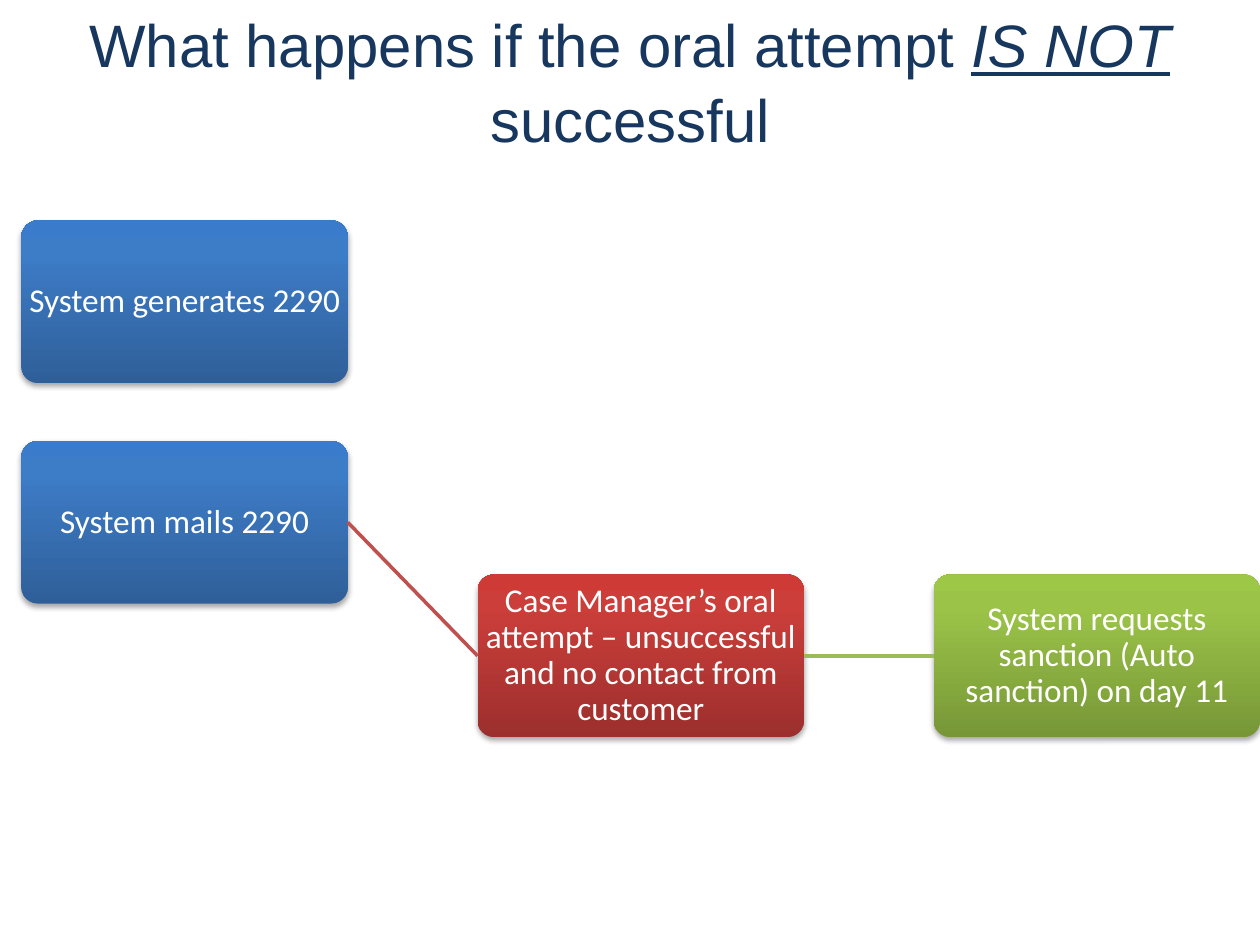
import dataclasses

import lxml.etree
import pptx
import pptx.dml.color
import pptx.enum.shapes
import pptx.enum.text
import pptx.oxml.ns
import pptx.util

Inches = pptx.util.Inches
qn = pptx.oxml.ns.qn


@dataclasses.dataclass(frozen=True)
class Theme:
    title_font: str = "Arial"
    title_size: float = 34.2
    title_color: str = "17375E"
    box_font: str = "Calibri"
    box_size: float = 19
    box_color: str = "FFFFFF"
    # Gradient stops run from the bottom edge to the top edge
    blue: tuple = ("2F5F99", "3D7CC7", "3A7CCB")
    red: tuple = ("9C2F2D", "CB3E3A", "CE3B37")
    green: tuple = ("779737", "9BC348", "9DC746")
    red_line: str = "C0504D"
    green_line: str = "9BBB59"
    line_width: float = 2


THEME = Theme()

# Grid of the flow chart, in inches
BOX_WIDTH, BOX_HEIGHT = 2.59, 1.29
GRID_LEFT, COLUMN_STEP = 0.17, 3.62
ROW_TOPS = (1.75, 3.5, 4.56)
LEFT_SITE, RIGHT_SITE = 1, 3


def rgb(color):
    return pptx.dml.color.RGBColor.from_string(color)


def add_element(parent, tag, **attributes):
    element = lxml.etree.SubElement(parent, qn(tag))
    for name, value in attributes.items():
        element.set(name, str(value))
    return element


def prepare_frame(text_frame, margin):
    text_frame.word_wrap = True
    text_frame.vertical_anchor = pptx.enum.text.MSO_ANCHOR.MIDDLE
    text_frame.margin_left = text_frame.margin_right = Inches(margin)
    text_frame.margin_top = text_frame.margin_bottom = Inches(margin)
    paragraph = text_frame.paragraphs[0]
    paragraph.alignment = pptx.enum.text.PP_ALIGN.CENTER
    return paragraph


def add_run(paragraph, text, font, size, color, emphasis=False):
    run = paragraph.add_run()
    run.text = text
    run.font.name = font
    run.font.size = pptx.util.Pt(size)
    run.font.color.rgb = rgb(color)
    run.font.italic = run.font.underline = emphasis


def add_title(slide, width, parts):
    box = slide.shapes.add_textbox(0, Inches(0.17), width, Inches(0.92))
    paragraph = prepare_frame(box.text_frame, 0.05)
    paragraph.line_spacing = 1.05
    for text, emphasis in parts:
        add_run(paragraph, text, THEME.title_font, THEME.title_size,
                THEME.title_color, emphasis)


def fill_gradient(shape, colors):
    shape.fill.gradient()
    shape.fill.gradient_angle = 90
    stops = shape.element.spPr.find(qn("a:gradFill")).find(qn("a:gsLst"))
    for stop in list(stops):
        stops.remove(stop)
    for position, color in zip((0, 80, 100), colors):
        stop = add_element(stops, "a:gs", pos=position * 1000)
        add_element(stop, "a:srgbClr", val=color)


def add_shadow(shape):
    shape.shadow.inherit = False
    effects = shape.element.spPr.find(qn("a:effectLst"))
    shadow = add_element(effects, "a:outerShdw", blurRad=pptx.util.Pt(3.1),
                         dist=pptx.util.Pt(1.8), dir=90 * 60000, rotWithShape=0)
    color = add_element(shadow, "a:srgbClr", val="000000")
    add_element(color, "a:alpha", val=35000)


def add_step(slide, column, row, text, colors):
    shape = slide.shapes.add_shape(
        pptx.enum.shapes.MSO_SHAPE.ROUNDED_RECTANGLE,
        Inches(GRID_LEFT + column * COLUMN_STEP), Inches(ROW_TOPS[row]),
        Inches(BOX_WIDTH), Inches(BOX_HEIGHT))
    shape.adjustments[0] = 0.1
    fill_gradient(shape, colors)
    shape.line.fill.background()
    add_shadow(shape)
    paragraph = prepare_frame(shape.text_frame, 0)
    paragraph.line_spacing = 0.9
    add_run(paragraph, text, THEME.box_font, THEME.box_size, THEME.box_color)
    return shape


def add_link(slide, start, end, color):
    connector = slide.shapes.add_connector(
        pptx.enum.shapes.MSO_CONNECTOR.STRAIGHT, 0, 0, 0, 0)
    connector.begin_connect(start, RIGHT_SITE)
    connector.end_connect(end, LEFT_SITE)
    connector.line.color.rgb = rgb(color)
    connector.line.width = pptx.util.Pt(THEME.line_width)
    add_element(connector.element.spPr, "a:effectLst")


def main():
    presentation = pptx.Presentation()
    presentation.slide_width = Inches(10)
    presentation.slide_height = Inches(7.5)
    slide = presentation.slides.add_slide(presentation.slide_layouts[6])

    # Title
    add_title(slide, presentation.slide_width, (
        ("What happens if the oral attempt ", False),
        ("IS NOT ", True),
        ("successful", False)))

    # Steps of the process
    add_step(slide, 0, 0, "System generates 2290", THEME.blue)
    mailing = add_step(slide, 0, 1, "System mails 2290", THEME.blue)
    attempt = add_step(
        slide, 1, 2,
        "Case Manager’s oral attempt – unsuccessful and no contact from customer",
        THEME.red)
    sanction = add_step(
        slide, 2, 2, "System requests sanction (Auto sanction) on day 11",
        THEME.green)

    # Links between the steps
    add_link(slide, mailing, attempt, THEME.red_line)
    add_link(slide, attempt, sanction, THEME.green_line)

    presentation.save("out.pptx")


if __name__ == "__main__":
    main()
